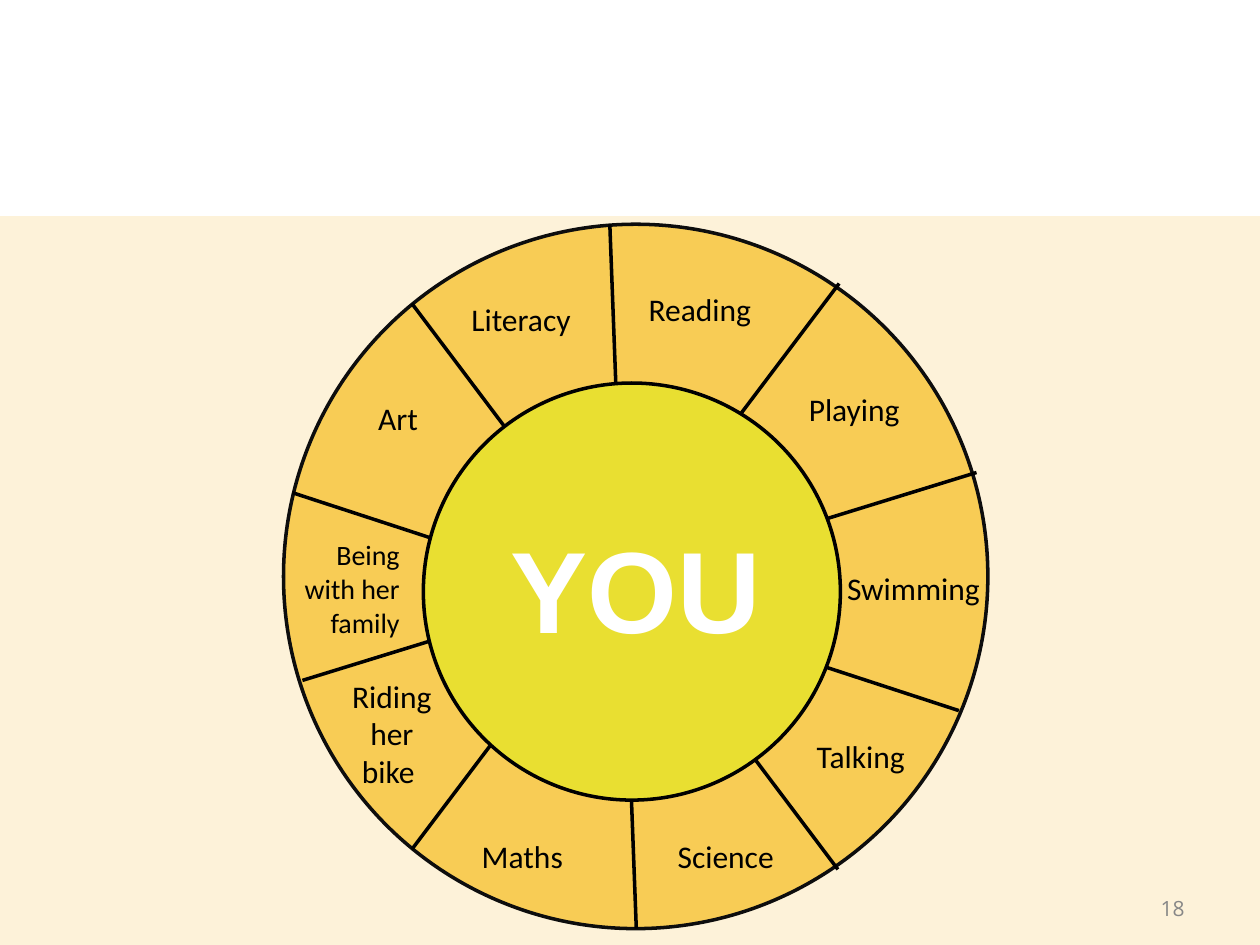
import pptx
import pptx.util
import pptx.dml.color
import pptx.enum.shapes
import pptx.enum.text
import pptx.oxml.ns
import lxml.etree

ALIGN = pptx.enum.text.PP_ALIGN
ANCHOR = pptx.enum.text.MSO_ANCHOR
SHAPE = pptx.enum.shapes.MSO_SHAPE


def rgb(value):
    return pptx.dml.color.RGBColor.from_string(value)


class Wheel:
    COLS, ROWS = 100, 75
    INK, WHITE = "000000", "FFFFFF"
    STROKE = pptx.util.Pt(2)

    def __init__(self, prs):
        self.prs = prs
        self.s = prs.slides.add_slide(prs.slide_layouts[6])

    def x(self, cols):
        return round(self.prs.slide_width * cols / self.COLS)

    def y(self, rows):
        return round(self.prs.slide_height * rows / self.ROWS)

    def box(self, left, top, width, height):
        return self.x(left), self.y(top), self.x(width), self.y(height)

    def background(self, color):
        fill = self.s.background.fill
        fill.solid()
        fill.fore_color.rgb = rgb(color)

    def shape(self, kind, at, fill, line):
        sp = self.s.shapes.add_shape(kind, *self.box(*at))
        sp.shadow.inherit = False
        sp.fill.solid()
        sp.fill.fore_color.rgb = rgb(fill)
        sp.line.color.rgb = rgb(line)
        sp.line.width = self.STROKE

    def spoke(self, x1, y1, x2, y2):
        sp = self.s.shapes.add_connector(
            pptx.enum.shapes.MSO_CONNECTOR.STRAIGHT,
            self.x(x1), self.y(y1), self.x(x2), self.y(y2))
        sp.line.color.rgb = rgb(self.INK)
        sp.line.width = self.STROKE
        lxml.etree.SubElement(sp._element.spPr, pptx.oxml.ns.qn("a:effectLst"))

    def text(self, words, at, size=18, align=ALIGN.CENTER, font="Calibri",
             color=INK, bold=False, anchor=ANCHOR.TOP, grow=True):
        tf = self.s.shapes.add_textbox(*self.box(*at)).text_frame
        tf.word_wrap = True
        tf.vertical_anchor = anchor
        if grow:
            tf.auto_size = pptx.enum.text.MSO_AUTO_SIZE.SHAPE_TO_FIT_TEXT
        p = tf.paragraphs[0]
        p.text = words
        p.alignment = align
        p.font.size = pptx.util.Pt(size)
        p.font.name = font
        p.font.bold = bold
        p.font.color.rgb = rgb(color)


LABELS = [
    ("Playing", (55.6, 30.5, 24.4, 4)),
    ("Art", (19.4, 31.2, 24.4, 4)),
    ("Maths", (26.5, 65.9, 29.9, 4)),
    ("Swimming", (65.8, 44.7, 13.4, 4)),
    ("Riding her bike ", (26.4, 53.2, 9.4, 10.1)),
    ("Literacy", (26.4, 23.3, 29.9, 4)),
    ("Reading", (40.6, 22.5, 29.9, 4)),
    ("Talking ", (61.9, 58, 13.4, 4)),
    ("Science", (50.9, 65.9, 13.4, 4)),
]

SPOKES = [
    (23.2, 39.1, 76.1, 56.4),
    (32.7, 67.4, 66.6, 22.5),
    (77.5, 37.5, 24, 54),
    (32.7, 24.1, 66.5, 69),
    (48.4, 17.8, 50.5, 73.7),
]


def main():
    prs = pptx.Presentation()
    prs.slide_width = pptx.util.Inches(10)
    prs.slide_height = pptx.util.Inches(7.5)
    wheel = Wheel(prs)
    wheel.background("FDF2D9")
    wheel.shape(SHAPE.RECTANGLE, (0, 0, 100, 17), wheel.WHITE, wheel.WHITE)
    wheel.text("18", (90, 70.6, 5, 2.9), size=12, align=ALIGN.RIGHT,
               font="Open Sans", color="878787", anchor=ANCHOR.MIDDLE, grow=False)
    wheel.shape(SHAPE.OVAL, (22.5, 17.8, 55.9, 55.9), "F8CC55", "0D0D0D")
    for ends in SPOKES:
        wheel.spoke(*ends)
    for words, at in LABELS:
        wheel.text(words, at)
    wheel.text("Being with her family", (22.5, 42.2, 10.2, 9.1), size=16,
               align=ALIGN.RIGHT)
    wheel.shape(SHAPE.OVAL, (33.6, 30.4, 33.1, 33.1), "E9DF31", wheel.INK)
    wheel.text("YOU", (35.1, 40.6, 30.7, 12.1), size=66, font="Arial",
               color=wheel.WHITE, bold=True)
    prs.save("out.pptx")


if __name__ == "__main__":
    main()
